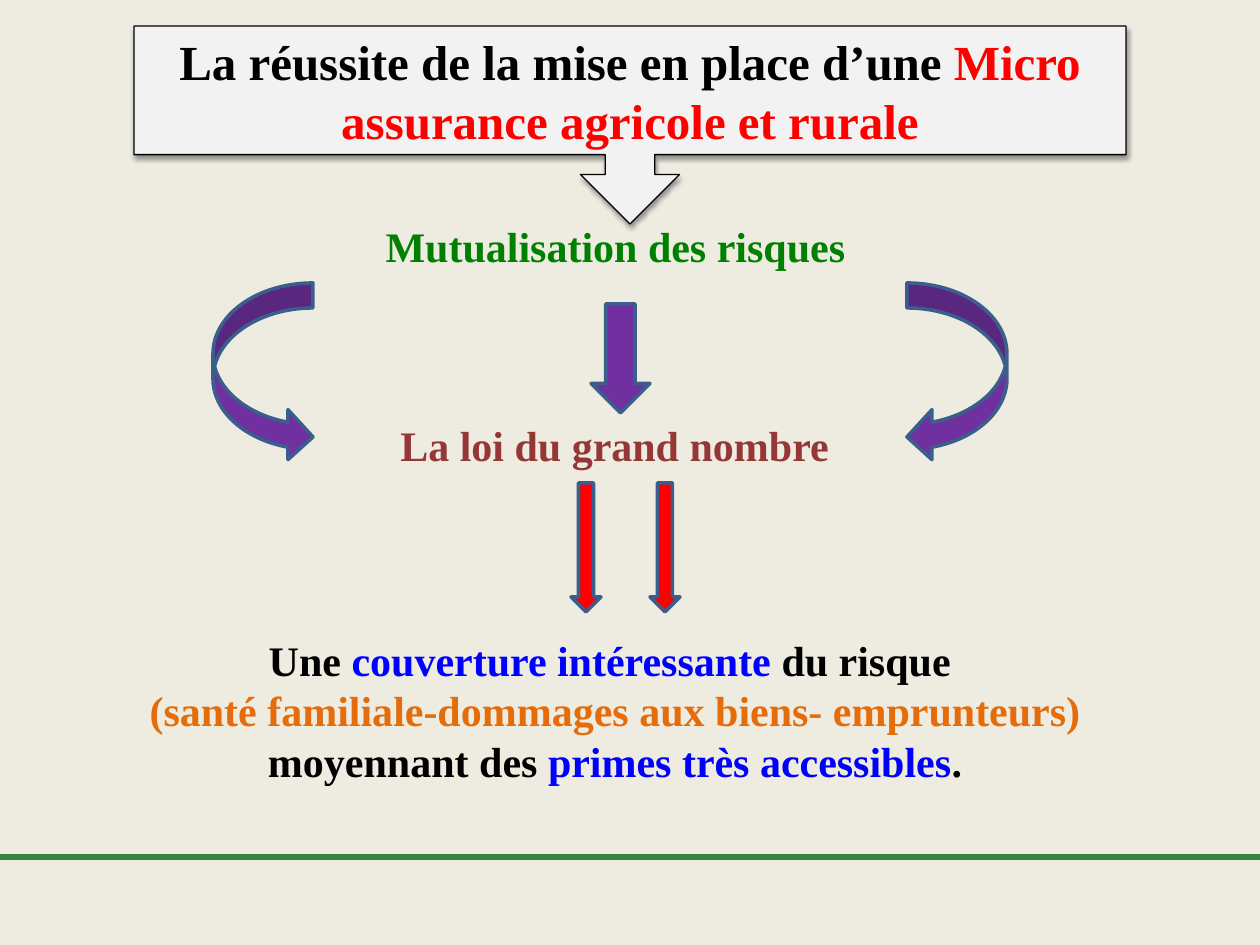
from lxml.etree import SubElement
from pptx import Presentation
from pptx.dml.color import RGBColor
from pptx.enum.shapes import MSO_CONNECTOR, MSO_SHAPE
from pptx.enum.text import MSO_ANCHOR, PP_ALIGN
from pptx.oxml.ns import qn
from pptx.util import Pt

SCALE = 914400 / 126
FONT = "Times New Roman"
BLACK, RED, BLUE, PURPLE = "000000", "FF0000", "0000FF", "7030A0"


def px(n):
    """Turn px into EMU."""
    return round(n * SCALE)


def paint(color, value):
    """Set a colour from a hex string."""
    color.rgb = RGBColor.from_string(value)


class Deck:
    """Hold the style and the current slide."""

    def __init__(self, width, height, back):
        """Open a blank slide with a plain background."""
        self.deck = Presentation()
        self.deck.slide_width, self.deck.slide_height = px(width), px(height)
        self.slide = self.deck.slides.add_slide(self.deck.slide_layouts[6])
        self.shapes = self.slide.shapes
        fill = self.slide.background.fill
        fill.solid()
        paint(fill.fore_color, back)

    def shape(self, kind, box, fill, edge="3A5F8C", width=2):
        """Add a filled and outlined preset shape."""
        item = self.shapes.add_shape(kind, *map(px, box))
        item.shadow.inherit = False
        item.fill.solid()
        paint(item.fill.fore_color, fill)
        paint(item.line.color, edge)
        item.line.width = Pt(width)
        return item

    def label(self, item, rows, size):
        """Fill an item with centred bold rows made of (text, colour) parts."""
        frame = item.text_frame
        frame.word_wrap = True
        frame.vertical_anchor = MSO_ANCHOR.MIDDLE
        for i, row in enumerate(rows):
            para = frame.paragraphs[0] if i == 0 else frame.add_paragraph()
            para.alignment = PP_ALIGN.CENTER
            para.font.name, para.font.size, para.font.bold = FONT, Pt(size), True
            for text, color in row:
                run = para.add_run()
                run.text = text
                paint(run.font.color, color)

    def text(self, box, rows, size=24):
        """Add a text box."""
        self.label(self.shapes.add_textbox(*map(px, box)), rows, size)

    def callout(self, box, rows, size=28):
        """Add a shadowed callout that points down."""
        item = self.shape(MSO_SHAPE.DOWN_ARROW_CALLOUT, box, "F2F2F2", BLACK, 0.75)
        glow = SubElement(
            item.element.spPr.find(qn("a:effectLst")), qn("a:outerShdw"),
            blurRad=str(Pt(3.1)), dist=str(Pt(1.6)), dir="5400000", rotWithShape="0")
        tint = SubElement(glow, qn("a:srgbClr"), val=BLACK)
        SubElement(tint, qn("a:alpha"), val="38000")
        self.label(item, rows, size)

    def rule(self, left, right, y, color, width):
        """Add a level line."""
        line = self.shapes.add_connector(
            MSO_CONNECTOR.STRAIGHT, px(left), px(y), px(right), px(y))
        paint(line.line.color, color)
        line.line.width = Pt(width)
        SubElement(line.element.spPr, qn("a:effectLst"))


def main():
    """Build and save the slide."""
    deck = Deck(1260, 945, "EEECE1")
    deck.rule(0, 1260, 857, "3A8241", 4)
    deck.callout((134, 26, 992, 198), [[
        ("La réussite de la mise en place d’une ", BLACK),
        ("Micro assurance agricole et rurale", RED)]])
    deck.text((95, 630, 1040, 160), [
        [("Une ", BLACK), ("couverture intéressante ", BLUE), ("du risque ", BLACK)],
        [("(santé familiale-dommages aux biens- emprunteurs)", "E46C0A")],
        [("moyennant des ", BLACK), ("primes très accessibles", BLUE), (".", BLACK)]])
    curves = (MSO_SHAPE.CURVED_RIGHT_ARROW, 213), (MSO_SHAPE.CURVED_LEFT_ARROW, 907)
    for kind, x in curves:
        deck.shape(kind, (x, 283, 100, 179), PURPLE)
    deck.shape(MSO_SHAPE.DOWN_ARROW, (591, 304, 59, 109), PURPLE)
    for x in (571, 650):
        deck.shape(MSO_SHAPE.DOWN_ARROW, (x, 483, 30, 129), RED)
    deck.text((174, 214, 883, 63), [[("Mutualisation des risques", "008000")]])
    deck.text((273, 413, 694, 63), [[("La loi du grand nombre ", "953735")]])
    deck.deck.save("out.pptx")


if __name__ == "__main__":
    main()
